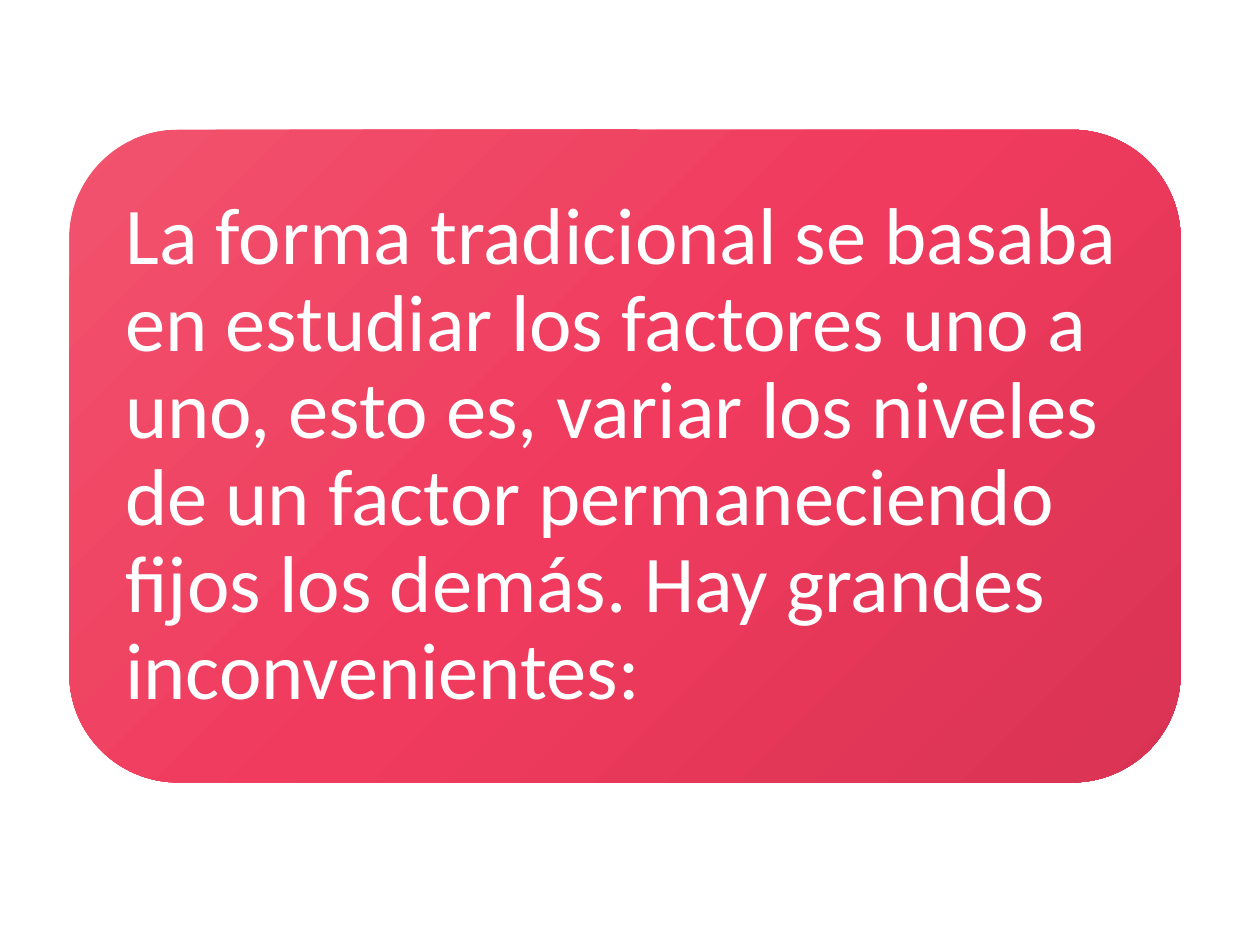
from copy import deepcopy

from pptx import Presentation
from pptx.dml.color import RGBColor
from pptx.enum.shapes import MSO_SHAPE as Preset
from pptx.enum.text import MSO_ANCHOR as Anchor, PP_ALIGN as Align
from pptx.util import Pt

WHITE = RGBColor(0xFF, 0xFF, 0xFF)
GRADIENT = [
    (0, RGBColor(0xF1, 0x53, 0x6D)),
    (0.5, RGBColor(0xF0, 0x3B, 0x5E)),
    (1, RGBColor(0xD9, 0x33, 0x53)),
]
STATEMENT = (
    "La forma tradicional se basaba en estudiar los factores uno a uno, "
    "esto es, variar los niveles de un factor permaneciendo fijos los demás. "
    "Hay grandes inconvenientes:"
)

deck = Presentation()
deck.slide_width, deck.slide_height = Pt(720), Pt(540)
slide = deck.slides.add_slide(deck.slide_layouts[6])

# Card with a diagonal three-stop gradient
card = slide.shapes.add_shape(
    Preset.ROUNDED_RECTANGLE, Pt(39.6), Pt(74.16), Pt(635.04), Pt(372.96)
)
card.shadow.inherit = False
card.line.fill.background()
card.fill.gradient()
card.fill.gradient_angle = 315
stop_list = card._element.xpath(".//a:gsLst")[0]
stop_list.insert(1, deepcopy(stop_list[0]))
for stop, (position, color) in zip(card.fill.gradient_stops, GRADIENT):
    stop.position = position
    stop.color.rgb = color

# Statement inside the card
frame = card.text_frame
paragraph = frame.paragraphs[0]
statement = paragraph.add_run()
statement.text = STATEMENT
statement.font.color.rgb = WHITE

inset = Pt(13.8)
formats = [
    (frame, {
        "word_wrap": True,
        "vertical_anchor": Anchor.MIDDLE,
        "margin_left": inset,
        "margin_right": inset,
        "margin_top": inset,
        "margin_bottom": inset,
    }),
    (paragraph, {"alignment": Align.LEFT, "line_spacing": 0.9}),
    (statement.font, {"name": "Calibri", "size": Pt(46)}),
]
for part, values in formats:
    for attribute, value in values.items():
        setattr(part, attribute, value)

deck.save("out.pptx")
